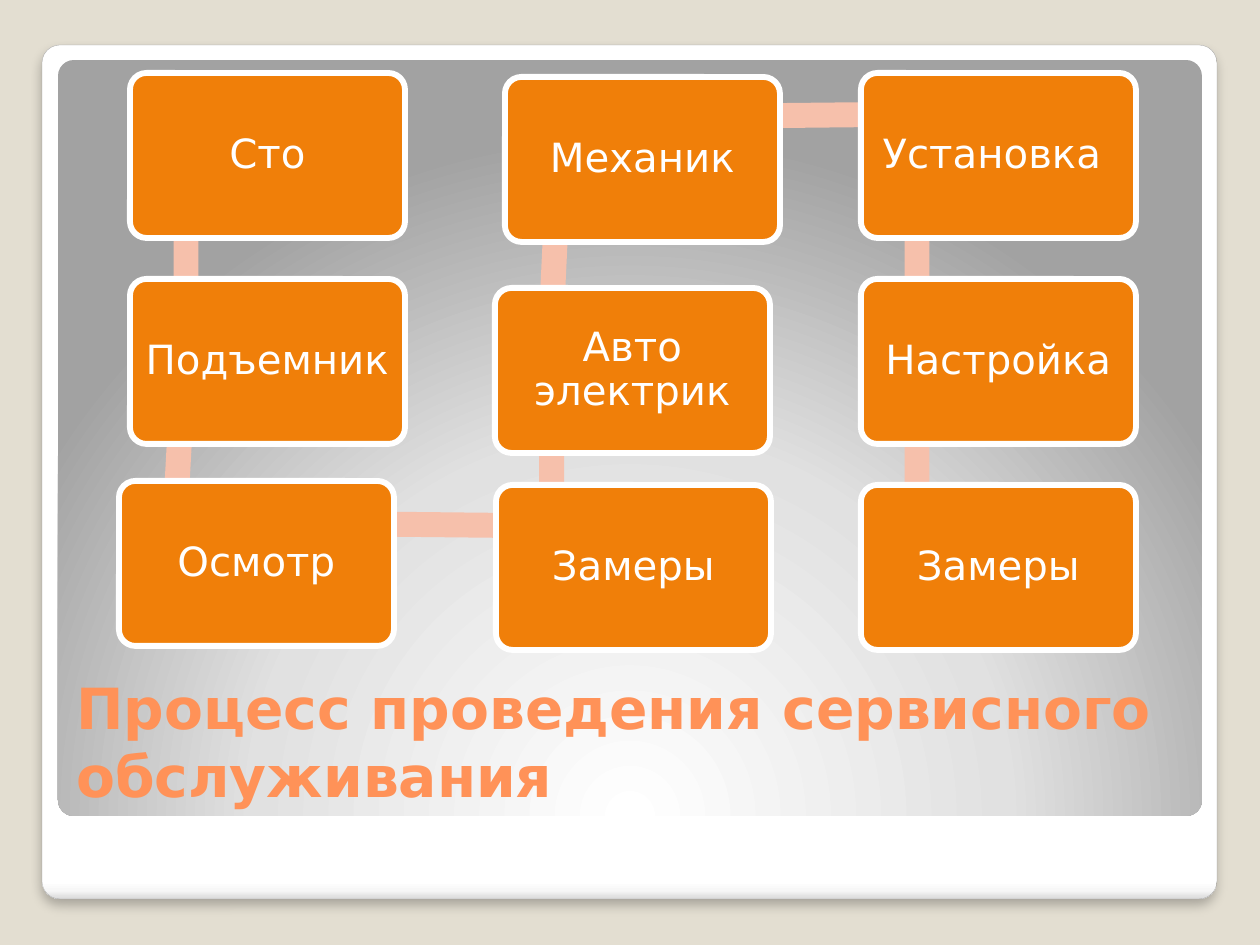
import math
from dataclasses import dataclass

from lxml import etree
from pptx import Presentation, util as u
from pptx.dml.color import RGBColor
from pptx.enum import shapes, text
from pptx.oxml.ns import nsdecls, qn

PX = 914400 // 126


@dataclass(frozen=True)
class Theme:
    background: str = "E3DED1"
    frame_line: str = "A4A4A4"
    box: str = "F07F09"
    bar: str = "F6C0AB"
    white: str = "FFFFFF"
    title: str = "FF9258"
    font: str = "DejaVu Sans"
    title_size: float = 32.4
    box_size: float = 23
    box_line: float = 3.35


THEME = Theme()
TITLE = "Процесс проведения сервисного обслуживания"
# Steps in process order: label, left, top
STEPS = [
    ("Сто", 130, 73),
    ("Подъемник", 130, 279),
    ("Осмотр", 119, 481),
    ("Замеры", 496, 485),
    ("Авто электрик", 495, 288),
    ("Механик", 505, 77),
    ("Установка ", 861, 73),
    ("Настройка", 861, 279),
    ("Замеры", 861, 485),
]
BOX_WIDTH, BOX_HEIGHT, BOX_INSET = 275, 165, 8
BAR_THICKNESS = 25
ANCHOR_X, ANCHOR_Y = 56, 41  # bars join boxes at this offset from the corner

FRAME = (42, 45, 1175, 854)
PANEL = (58, 60, 1144, 756)
TITLE_AREA = (64, 670, 1128, 145)
FRAME_STOPS = [(0, "FFFFFF"), (98, "FFFFFF"), (99, "F7F7F7"), (100, "DADADA")]
PANEL_STOPS = [(0, "FFFFFF"), (55, "E1E1E1"), (100, "A2A2A2")]
DOWNWARD = '<a:lin ang="5400000" scaled="0"/>'
FROM_BELOW = ('<a:path path="circle"><a:fillToRect l="50000" t="175000" '
              'r="50000" b="-75000"/></a:path>')
SOFT_SHADOW = (f'<a:outerShdw {nsdecls("a")} blurRad="76200" dist="50800" '
               'dir="5400000" algn="tl" rotWithShape="0"><a:srgbClr val="000000">'
               '<a:alpha val="25000"/></a:srgbClr></a:outerShdw>')


def color(value):
    return RGBColor.from_string(value)


def emu(values):
    return [u.Emu(round(value * PX)) for value in values]


def add_shape(slide, kind, area, fill=None, radius=None):
    shape = slide.shapes.add_shape(kind, *emu(area))
    shape.shadow.inherit = False
    shape.line.fill.background()
    if radius is not None:
        shape.adjustments[0] = radius
    if fill:
        shape.fill.solid()
        shape.fill.fore_color.rgb = color(fill)
    return shape


def set_line(shape, line_color, width):
    shape.line.color.rgb = color(line_color)
    shape.line.width = u.Pt(width)


def set_gradient(shape, stops, direction):
    """Fill with several stops; direction is the XML of a line or a path."""
    shape.fill.background()
    properties = shape._element.spPr
    stop_xml = "".join(
        f'<a:gs pos="{position * 1000}"><a:srgbClr val="{value}"/></a:gs>'
        for position, value in stops)
    gradient = etree.fromstring(
        f'<a:gradFill {nsdecls("a")} rotWithShape="1">'
        f"<a:gsLst>{stop_xml}</a:gsLst>{direction}</a:gradFill>")
    properties.replace(properties.find(qn("a:noFill")), gradient)


def write(frame, words, size, text_color, anchor, bold=False):
    frame.word_wrap = True
    frame.vertical_anchor = anchor
    paragraph = frame.paragraphs[0]
    run = paragraph.add_run()
    run.text = words
    run.font.name = THEME.font
    run.font.size = u.Pt(size)
    run.font.bold = bold
    run.font.color.rgb = color(text_color)
    return paragraph


def add_bar(slide, start, end):
    """Flat bar centred on the line from start to end."""
    (x1, y1), (x2, y2) = start, end
    length = math.dist(start, end)
    area = ((x1 + x2 - length) / 2, (y1 + y2 - BAR_THICKNESS) / 2,
            length, BAR_THICKNESS)
    bar = add_shape(slide, shapes.MSO_SHAPE.RECTANGLE, area, THEME.bar)
    bar.rotation = round(math.degrees(math.atan2(y2 - y1, x2 - x1)), 1)


def add_step(slide, label, left, top):
    box = add_shape(slide, shapes.MSO_SHAPE.ROUNDED_RECTANGLE,
                    (left, top, BOX_WIDTH, BOX_HEIGHT), THEME.box, 0.1)
    set_line(box, THEME.white, THEME.box_line)
    frame = box.text_frame
    frame.margin_left = frame.margin_right = u.Emu(BOX_INSET * PX)
    frame.margin_top = frame.margin_bottom = u.Emu(BOX_INSET * PX)
    paragraph = write(frame, label, THEME.box_size, THEME.white,
                      text.MSO_ANCHOR.MIDDLE)
    paragraph.alignment = text.PP_ALIGN.CENTER
    paragraph.line_spacing = 0.9


def add_backdrop(slide):
    rounded = shapes.MSO_SHAPE.ROUNDED_RECTANGLE
    frame = add_shape(slide, rounded, FRAME, radius=0.021)
    set_gradient(frame, FRAME_STOPS, DOWNWARD)
    set_line(frame, THEME.frame_line, 0.16)
    effects = frame._element.spPr.find(qn("a:effectLst"))
    effects.append(etree.fromstring(SOFT_SHADOW))
    panel = add_shape(slide, rounded, PANEL, radius=0.021)
    set_gradient(panel, PANEL_STOPS, FROM_BELOW)


def main():
    presentation = Presentation()
    presentation.slide_width, presentation.slide_height = emu((1260, 945))
    slide = presentation.slides.add_slide(presentation.slide_layouts[6])
    slide.background.fill.solid()
    slide.background.fill.fore_color.rgb = color(THEME.background)
    add_backdrop(slide)

    title = slide.shapes.add_textbox(*emu(TITLE_AREA))
    write(title.text_frame, TITLE, THEME.title_size, THEME.title,
          text.MSO_ANCHOR.BOTTOM, bold=True)

    anchors = [(left + ANCHOR_X, top + ANCHOR_Y) for _, left, top in STEPS]
    for start, end in zip(anchors, anchors[1:]):
        add_bar(slide, start, end)
    for step in STEPS:
        add_step(slide, *step)
    presentation.save("out.pptx")


if __name__ == "__main__":
    main()
